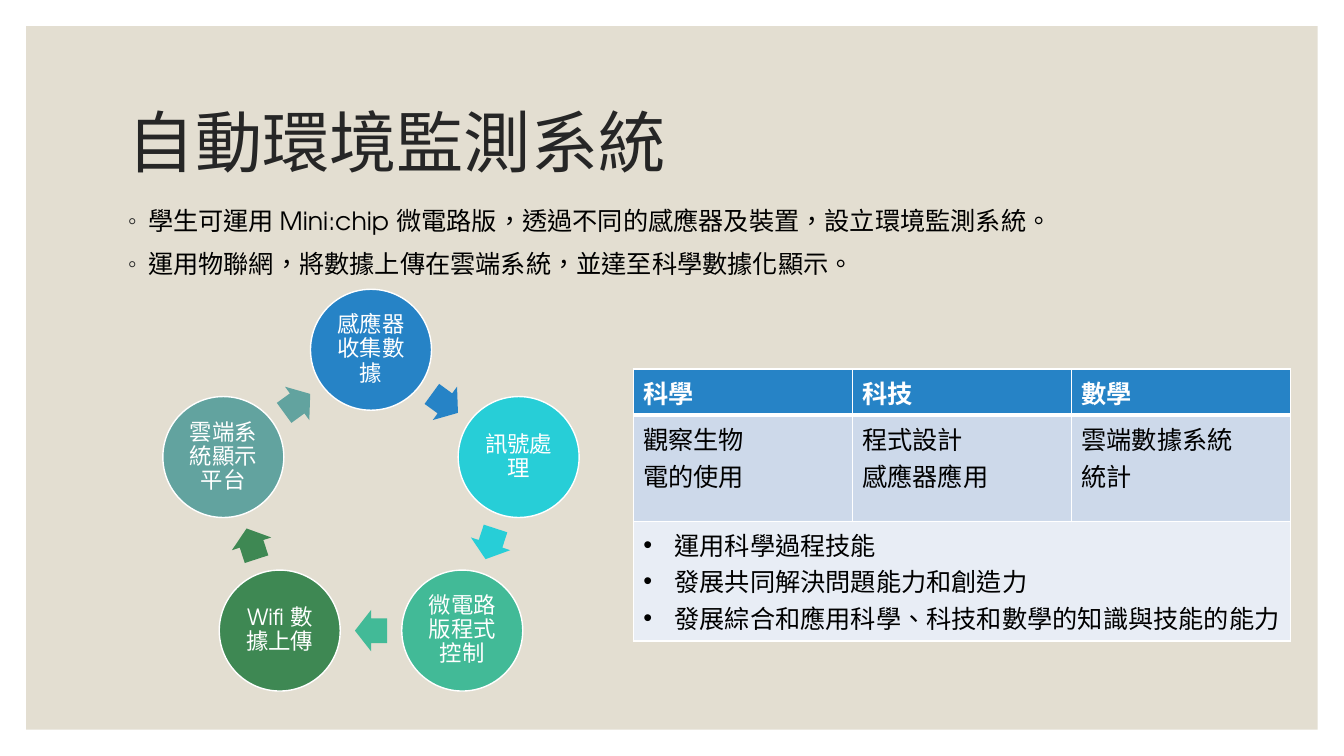
from math import cos, radians, sin

from lxml.etree import SubElement
from pptx import Presentation
from pptx.dml.color import RGBColor
from pptx.enum.shapes import MSO_SHAPE
from pptx.enum.text import MSO_ANCHOR, PP_ALIGN
from pptx.oxml.ns import qn
from pptx.util import Inches, Pt

COLORS = {
    "panel": "E3DED1", "title": "262626", "text": "000000", "white": "FFFFFF",
    "blue": "2683C6", "cyan": "27CED7", "mint": "42BA97", "green": "3E8853",
    "teal": "62A39F", "row": "CDD9EA", "band": "E8EDF5",
}
FONT = "TeX Gyre Adventor"


def write(text, tf, size=18, color="text", bold=False, align=PP_ALIGN.LEFT,
          spacing=None, before=0, bullet=None, bullet_color=None, indent=0):
    tf.word_wrap = True
    for i, line in enumerate(text.split("\n")):
        p = tf.paragraphs[0] if i == 0 else tf.add_paragraph()
        p.alignment = align
        p.space_before = Pt(before)
        if spacing:
            p.line_spacing = spacing
        if bullet:
            pPr = p._p.get_or_add_pPr()
            pPr.set("marL", str(Inches(indent)))
            pPr.set("indent", str(-Inches(indent)))
            if bullet_color:
                buClr = SubElement(pPr, qn("a:buClr"))
                SubElement(buClr, qn("a:srgbClr"), val=COLORS[bullet_color])
            SubElement(pPr, qn("a:buFont"), typeface="Arial")
            SubElement(pPr, qn("a:buChar"), char=bullet)
        r = p.add_run()
        r.text = line
        r._r.get_or_add_rPr().set("lang", "zh-TW")
        r.font.name = FONT
        r.font.size = Pt(size)
        r.font.bold = bold
        r.font.color.rgb = RGBColor.from_string(COLORS[color])


def add_filled(kind, left, top, width, height, color):
    sp = s.shapes.add_shape(kind, Inches(left), Inches(top), Inches(width), Inches(height))
    sp.shadow.inherit = False
    sp.fill.solid()
    sp.fill.fore_color.rgb = RGBColor.from_string(COLORS[color])
    sp.line.fill.background()
    return sp


prs = Presentation()
prs.slide_width, prs.slide_height = Inches(13.33), Inches(7.5)
s = prs.slides.add_slide(prs.slide_layouts[6])

add_filled(MSO_SHAPE.RECTANGLE, 0.26, 0.26, 12.81, 6.98, "panel")

title = s.shapes.add_textbox(Inches(1.17), Inches(0.7), Inches(11), Inches(1.5))
title.text_frame.vertical_anchor = MSO_ANCHOR.MIDDLE
write("自動環境監測系統", title.text_frame, size=48, color="title", spacing=0.9)

body = s.shapes.add_textbox(Inches(1.17), Inches(1.99), Inches(11), Inches(0.9))
write("學生可運用 Mini:chip 微電路版，透過不同的感應器及裝置，設立環境監測系統。\n"
      "運用物聯網，將數據上傳在雲端系統，並達至科學數據化顯示。",
      body.text_frame, before=9, bullet="◦", bullet_color="title", indent=0.2)

steps = [("感應器收集數據", "blue"), ("訊號處理", "cyan"), ("微電路版程式控制", "mint"),
         ("Wifi 數據上傳", "green"), ("雲端系統顯示平台", "teal")]
center_x, center_y, radius = 3.68, 5.01, 1.54
circle, arrow_w, arrow_h = 1.2, 0.32, 0.41
turn = 360 / len(steps)
arrow_radius = radius * cos(radians(turn / 2))

for i, (label, color) in enumerate(steps):
    angle = radians(i * turn)
    sp = add_filled(MSO_SHAPE.OVAL, center_x + radius * sin(angle) - circle / 2,
                    center_y - radius * cos(angle) - circle / 2, circle, circle, color)
    sp.line.color.rgb = RGBColor.from_string(COLORS["white"])
    sp.line.width = Pt(1)
    tf = sp.text_frame
    tf.margin_left = tf.margin_right = tf.margin_top = tf.margin_bottom = Inches(0.02)
    tf.vertical_anchor = MSO_ANCHOR.MIDDLE
    write(label, tf, size=16, color="white", align=PP_ALIGN.CENTER, spacing=0.9)

    heading = (i + 0.5) * turn
    angle = radians(heading)
    arrow = add_filled(MSO_SHAPE.RIGHT_ARROW,
                       center_x + arrow_radius * sin(angle) - arrow_w / 2,
                       center_y - arrow_radius * cos(angle) - arrow_h / 2,
                       arrow_w, arrow_h, color)
    arrow.adjustments[0], arrow.adjustments[1] = 0.6, 0.5
    arrow.rotation = heading

rows = [
    (0.46, "blue", ["科學", "科技", "數學"]),
    (1.05, "row", ["觀察生物\n電的使用", "程式設計\n感應器應用", "雲端數據系統\n統計"]),
    (1.19, "band", ["運用科學過程技能\n發展共同解決問題能力和創造力\n"
                    "發展綜合和應用科學、科技和數學的知識與技能的能力"]),
]
table_width = 6.52
table = s.shapes.add_table(3, 3, Inches(6.28), Inches(3.66),
                           Inches(table_width), Inches(2.7)).table
for column in table.columns:
    column.width = Inches(table_width / 3)
table.cell(2, 0).merge(table.cell(2, 2))
table.cell(2, 0).margin_right = Inches(0.02)

for i, (height, color, texts) in enumerate(rows):
    table.rows[i].height = Inches(height)
    for j in range(3):
        cell = table.cell(i, j)
        tcPr = cell._tc.get_or_add_tcPr()
        for side in ("lnL", "lnR", "lnT", "lnB"):
            thick = (i, side) in ((0, "lnB"), (1, "lnT"))
            ln = SubElement(tcPr, qn("a:" + side), w=str(Pt(3 if thick else 1)))
            SubElement(SubElement(ln, qn("a:solidFill")), qn("a:srgbClr"), val=COLORS["white"])
        cell.fill.solid()
        cell.fill.fore_color.rgb = RGBColor.from_string(COLORS[color])
    for j, text in enumerate(texts):
        write(text, table.cell(i, j).text_frame, color="white" if i == 0 else "text",
              bold=i == 0, bullet="•" if i == 2 else None, indent=0.31)

prs.save("out.pptx")
